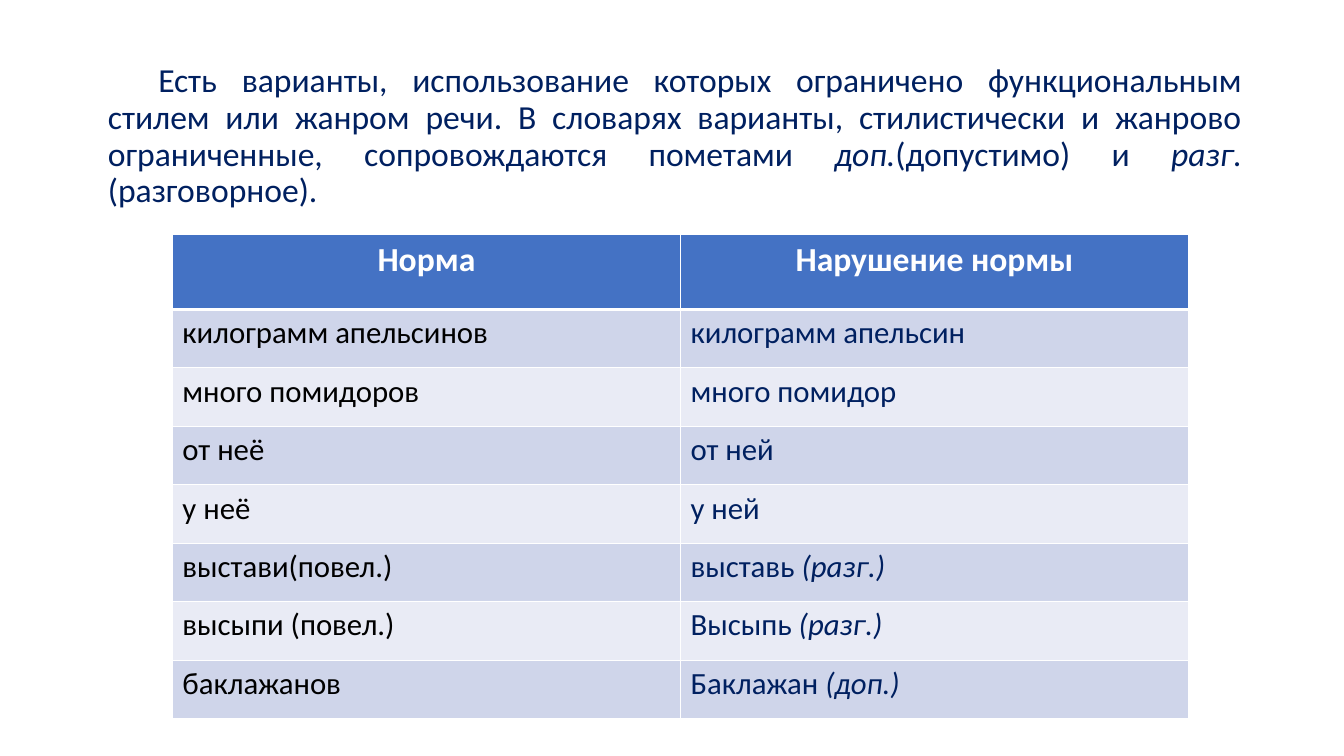
from lxml import etree
from pptx import Presentation
from pptx.dml.color import RGBColor
from pptx.enum.text import MSO_ANCHOR, MSO_AUTO_SIZE, PP_ALIGN
from pptx.oxml.ns import qn
from pptx.util import Inches, Pt

CENTER, JUSTIFY, LEFT = PP_ALIGN.CENTER, PP_ALIGN.JUSTIFY, PP_ALIGN.LEFT
TOP = MSO_ANCHOR.TOP
NO_AUTOFIT = MSO_AUTO_SIZE.NONE
FONT = "Calibri"
COLORS = {
    "navy": "002060", "black": "000000", "white": "FFFFFF",
    "header": "4472C4", "odd": "CFD5EA", "even": "E9EBF5",
}

INTRO = [
    ("Есть варианты, использование которых ограничено функциональным стилем "
     "или жанром речи. В словарях варианты, стилистически и жанрово "
     "ограниченные, сопровождаются пометами ", False),
    ("доп.", True),
    ("(допустимо) и ", False),
    ("разг. ", True),
    ("(разговорное).", False),
]
HEADINGS = ("Норма", "Нарушение нормы")
EXAMPLES = [
    ("килограмм апельсинов", "килограмм апельсин", ""),
    ("много помидоров", "много помидор", ""),
    ("от неё", "от ней", ""),
    ("у неё", "у ней", ""),
    ("выстави(повел.)", "выставь ", "(разг.)"),
    ("высыпи (повел.)", "Высыпь ", "(разг.)"),
    ("баклажанов", "Баклажан ", "(доп.)"),
]
COLUMN_WIDTH, HEADER_HEIGHT, ROW_HEIGHT = 5.04, 0.74, 0.58


def write(paragraph, text, size=22, color="navy", bold=False, italic=False, align=LEFT):
    paragraph.alignment = align
    run = paragraph.add_run()
    run.text = text
    run.font.name = FONT
    run.font.size = Pt(size)
    run.font.bold = bold
    run.font.italic = italic
    run.font.color.rgb = RGBColor.from_string(COLORS[color])


def style_cell(cell, fill, top=1, bottom=1):
    properties = cell._tc.get_or_add_tcPr()
    for side, width in (("L", 1), ("R", 1), ("T", top), ("B", bottom)):
        border = etree.SubElement(properties, qn(f"a:ln{side}"), w=str(Pt(width)))
        solid = etree.SubElement(border, qn("a:solidFill"))
        etree.SubElement(solid, qn("a:srgbClr"), val=COLORS["white"])
    cell.fill.solid()
    cell.fill.fore_color.rgb = RGBColor.from_string(COLORS[fill])
    cell.vertical_anchor = TOP


def add_intro(body):
    body.left, body.top = Inches(0.92), Inches(0.53)
    body.width, body.height = Inches(11.5), Inches(6.37)
    frame = body.text_frame
    frame.word_wrap = True
    frame.auto_size = NO_AUTOFIT
    frame.vertical_anchor = TOP
    paragraph = frame.paragraphs[0]
    properties = paragraph._p.get_or_add_pPr()
    properties.set("marL", str(Inches(0.05)))
    properties.set("indent", "0")
    etree.SubElement(properties, qn("a:buNone"))
    tabs = etree.SubElement(properties, qn("a:tabLst"))
    etree.SubElement(tabs, qn("a:tab"), pos=str(Inches(1)), algn="l")
    paragraph.line_spacing = 0.9
    paragraph.space_before = Pt(0)
    write(paragraph, "\t", size=28, color="black", align=JUSTIFY)
    for text, italic in INTRO:
        write(paragraph, text, size=24, italic=italic, align=JUSTIFY)


def add_examples(slide):
    table = slide.shapes.add_table(
        len(EXAMPLES) + 1, len(HEADINGS), Inches(1.71), Inches(2.33),
        Inches(COLUMN_WIDTH * len(HEADINGS)),
        Inches(HEADER_HEIGHT + ROW_HEIGHT * len(EXAMPLES))).table
    for column in table.columns:
        column.width = Inches(COLUMN_WIDTH)
    table.rows[0].height = Inches(HEADER_HEIGHT)
    for index, heading in enumerate(HEADINGS):
        cell = table.cell(0, index)
        style_cell(cell, "header", bottom=3)
        write(cell.text_frame.paragraphs[0], heading, size=24, color="white",
              bold=True, align=CENTER)
    for index, (norm, violation, label) in enumerate(EXAMPLES, start=1):
        table.rows[index].height = Inches(ROW_HEIGHT)
        norm_cell, violation_cell = table.cell(index, 0), table.cell(index, 1)
        for cell in (norm_cell, violation_cell):
            style_cell(cell, "odd" if index % 2 else "even", top=3 if index == 1 else 1)
        write(norm_cell.text_frame.paragraphs[0], norm, color="black")
        violation_line = violation_cell.text_frame.paragraphs[0]
        write(violation_line, violation)
        if label:
            write(violation_line, label, italic=True)


def main():
    deck = Presentation()
    deck.slide_width, deck.slide_height = Inches(13.33), Inches(7.5)
    slide = deck.slides.add_slide(deck.slide_layouts[1])
    title = slide.shapes.title.element
    title.getparent().remove(title)
    add_intro(slide.placeholders[1])
    add_examples(slide)
    deck.save("out.pptx")


if __name__ == "__main__":
    main()
